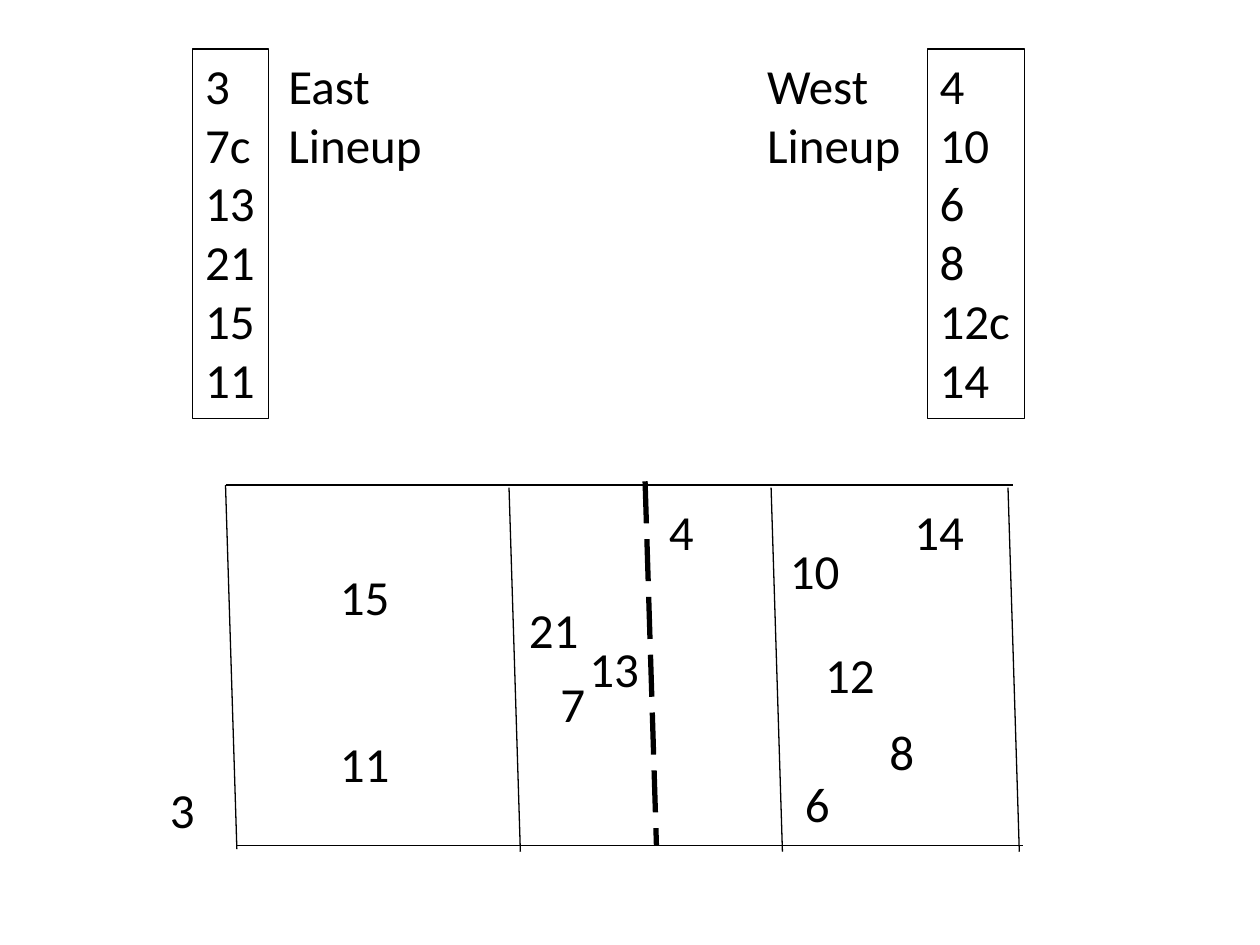
from lxml.etree import SubElement
from pptx import Presentation
from pptx.dml.color import RGBColor
from pptx.enum.dml import MSO_LINE
from pptx.enum.shapes import MSO_CONNECTOR
from pptx.enum.text import MSO_AUTO_SIZE
from pptx.oxml.ns import qn
from pptx.util import Inches, Pt

COLORS = {"ink": "000000"}
INK = RGBColor.from_string(COLORS["ink"])

deck = Presentation()
deck.slide_width, deck.slide_height = Inches(10), Inches(7.5)
slide = deck.slides.add_slide(deck.slide_layouts[6])
shapes = slide.shapes


def add_line(x1, y1, x2, y2, width=0.75):
    ends = [Inches(v) for v in (x1, y1, x2, y2)]
    line = shapes.add_connector(MSO_CONNECTOR.STRAIGHT, *ends)
    line.line.color.rgb = INK
    line.line.width = Pt(width)
    SubElement(line._element.spPr, qn("a:effectLst"))
    return line


def add_text(words, x, y, width, height):
    """Add a text box with one paragraph for each word."""
    box = shapes.add_textbox(Inches(x), Inches(y), Inches(width), Inches(height))
    frame = box.text_frame
    frame.word_wrap = False
    frame.auto_size = MSO_AUTO_SIZE.SHAPE_TO_FIT_TEXT
    frame.text = "\n".join(words)
    for para in frame.paragraphs:
        para.font.name = "Calibri"
        para.font.size = Pt(28)
        para.font.color.rgb = INK
    return box


# Court: two sidelines, four slanted cross lines and the dashed net
add_line(1.79, 3.85, 8.04, 3.85)
add_line(1.88, 6.71, 8.12, 6.71)
for x, top in [(1.79, 3.85), (4.04, 3.87), (6.12, 3.87), (8, 3.87)]:
    add_line(x, top, x + 0.09, top + 2.89)
net = add_line(5.12, 3.82, 5.21, 6.71, 3)
net.line.dash_style = MSO_LINE.LONG_DASH

# Players on court
players = [
    ("3", 1.25, 6.14), ("4", 5.21, 3.93), ("14", 7.16, 3.93),
    ("12", 6.45, 5.07), ("8", 6.96, 5.68), ("6", 6.29, 6.09),
    ("10", 6.17, 4.24), ("7", 4.35, 5.3), ("13", 4.58, 5.02),
    ("21", 4.1, 4.71), ("15", 2.6, 4.45), ("11", 2.6, 5.77),
]
for number, x, y in players:
    add_text([number], x, y, 0.2 + 0.2 * len(number), 0.57)

# Lineups: a framed list of numbers with its heading beside it
lineups = [
    ("East", 2.19, ["3", "7c", "13", "21", "15", "11"], 1.53, 0.6),
    ("West", 5.99, ["4", "10", "6", "8", "12c", "14"], 7.36, 0.77),
]
for team, left, numbers, x, width in lineups:
    roster = add_text(numbers, x, 0.39, width, 2.93)
    roster.line.color.rgb = INK
    roster.line.width = Pt(0.75)
    add_text([team, "Lineup"], left, 0.39, 1.27, 1.04)

deck.save("out.pptx")
